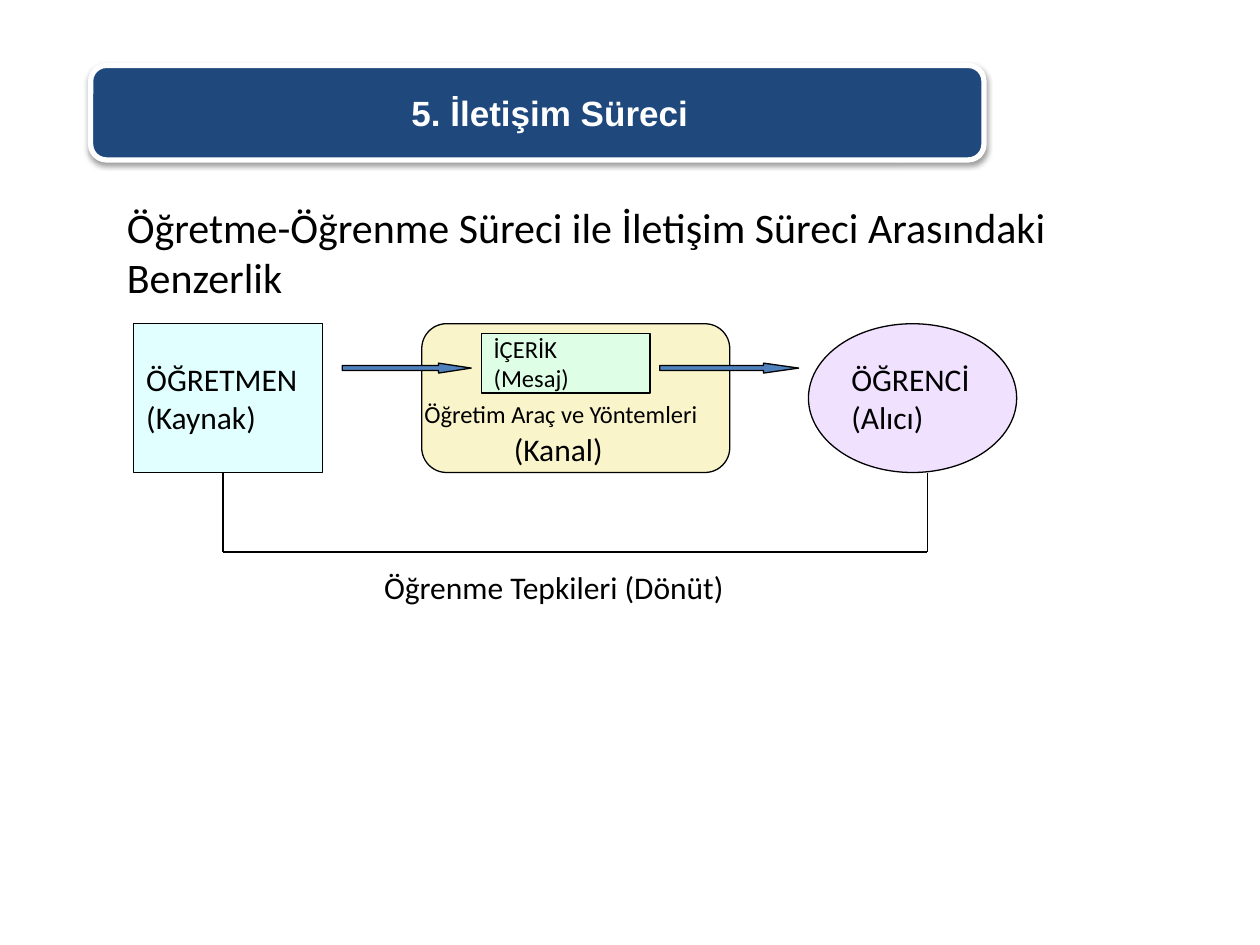
from dataclasses import dataclass

from lxml.etree import SubElement
from pptx import Presentation
from pptx.dml.color import RGBColor
from pptx.enum.shapes import MSO_CONNECTOR as Connector, MSO_SHAPE as Shape
from pptx.enum.text import MSO_ANCHOR as Anchor, PP_ALIGN as Align
from pptx.oxml.ns import qn
from pptx.util import Pt


@dataclass(frozen=True)
class Theme:
    banner: str = "1F497D"
    white: str = "FFFFFF"
    ink: str = "000000"
    teacher: str = "E1FFFF"
    student: str = "F0E1FF"
    channel: str = "F9F4C9"
    message: str = "DEFEE5"
    arrow: str = "4F81BD"
    banner_font: str = "Arial"
    body_font: str = "Calibri"
    banner_size: float = 20
    heading_size: float = 24
    label_size: float = 18
    small_size: float = 14
    hairline: float = 0.75
    banner_border: float = 3


THEME = Theme()
ROW_TOP, ROW_HEIGHT = 185, 85
ROW_BOTTOM = ROW_TOP + ROW_HEIGHT


def rgb(value):
    return RGBColor.from_string(value)


def write(frame, lines, size, font=THEME.body_font, color=THEME.ink,
          bold=False, align=Align.LEFT):
    frame.text = "\n".join(lines)
    for paragraph in frame.paragraphs:
        paragraph.alignment = align
        paragraph.font.name = font
        paragraph.font.size = Pt(size)
        paragraph.font.bold = bold
        paragraph.font.color.rgb = rgb(color)


def add_figure(slide, kind, box, fill, border=THEME.ink, weight=THEME.hairline):
    figure = slide.shapes.add_shape(kind, *map(Pt, box))
    figure.shadow.inherit = False
    figure.fill.solid()
    figure.fill.fore_color.rgb = rgb(fill)
    figure.line.color.rgb = rgb(border)
    figure.line.width = Pt(weight)
    return figure


def add_node(slide, kind, box, fill, lines, size=THEME.label_size):
    frame = add_figure(slide, kind, box, fill).text_frame
    frame.word_wrap = False
    frame.vertical_anchor = Anchor.MIDDLE
    write(frame, lines, size)


def add_label(slide, box, text, size=THEME.label_size):
    frame = slide.shapes.add_textbox(*map(Pt, box)).text_frame
    frame.word_wrap = True
    write(frame, [text], size)


def add_banner(slide, box, text):
    banner = add_figure(slide, Shape.ROUNDED_RECTANGLE, box, THEME.banner,
                        THEME.white, THEME.banner_border)
    frame = banner.text_frame
    frame.vertical_anchor = Anchor.MIDDLE
    write(frame, [text], THEME.banner_size, THEME.banner_font, THEME.white,
          bold=True, align=Align.CENTER)
    properties = frame.paragraphs[0]._p.get_or_add_pPr()
    properties.set("marL", str(Pt(14.4)))
    properties.set("indent", "0")

    effects = banner._element.spPr.find(qn("a:effectLst"))
    shadow = SubElement(effects, qn("a:outerShdw"), blurRad=str(Pt(3.1)),
                        dist=str(Pt(1.6)), dir="5400000", rotWithShape="0")
    tint = SubElement(shadow, qn("a:srgbClr"), val=THEME.ink)
    SubElement(tint, qn("a:alpha"), val="38000")


def add_flow_arrow(slide, left, width, head_ratio):
    arrow = add_figure(slide, Shape.RIGHT_ARROW, (left, 207.5, width, 5.7),
                       THEME.arrow)
    arrow.adjustments[1] = head_ratio


def add_feedback_path(slide, points):
    for start, end in zip(points, points[1:]):
        line = slide.shapes.add_connector(Connector.STRAIGHT,
                                          *map(Pt, start + end))
        line.line.color.rgb = rgb(THEME.ink)
        line.line.width = Pt(THEME.hairline)
        SubElement(line._element.spPr, qn("a:effectLst"))


def main():
    deck = Presentation()
    deck.slide_width, deck.slide_height = Pt(720), Pt(540)
    slide = deck.slides.add_slide(deck.slide_layouts[6])

    add_banner(slide, (51.8, 37.4, 510.5, 54), "5. İletişim Süreci")
    add_label(slide, (65.4, 111.6, 572.4, 65.5),
              "Öğretme-Öğrenme Süreci ile İletişim Süreci Arasındaki Benzerlik",
              THEME.heading_size)

    add_node(slide, Shape.RECTANGLE, (76.5, ROW_TOP, 108, ROW_HEIGHT),
             THEME.teacher, ["ÖĞRETMEN", "(Kaynak)"])
    add_node(slide, Shape.OVAL, (462, ROW_TOP, 119, ROW_HEIGHT),
             THEME.student, ["ÖĞRENCİ", "(Alıcı)"])
    add_figure(slide, Shape.ROUNDED_RECTANGLE,
               (241, ROW_TOP, 176, ROW_HEIGHT), THEME.channel)
    add_node(slide, Shape.RECTANGLE, (275, 190.7, 96.5, 34),
             THEME.message, ["İÇERİK", "(Mesaj)"], THEME.small_size)
    add_label(slide, (235.4, 224.6, 187.2, 24), "Öğretim Araç ve Yöntemleri",
              THEME.small_size)
    add_label(slide, (286.6, 242, 113, 29), "(Kanal)")

    add_feedback_path(slide, [(127.5, ROW_BOTTOM), (127.5, 315.4),
                              (530, 315.4), (530, ROW_BOTTOM)])
    add_flow_arrow(slide, 195.6, 73.7, 3.28)
    add_flow_arrow(slide, 377, 79.4, 3.53)
    add_label(slide, (212.4, 321.2, 255, 29), "Öğrenme Tepkileri (Dönüt)")

    deck.save("out.pptx")


if __name__ == "__main__":
    main()
